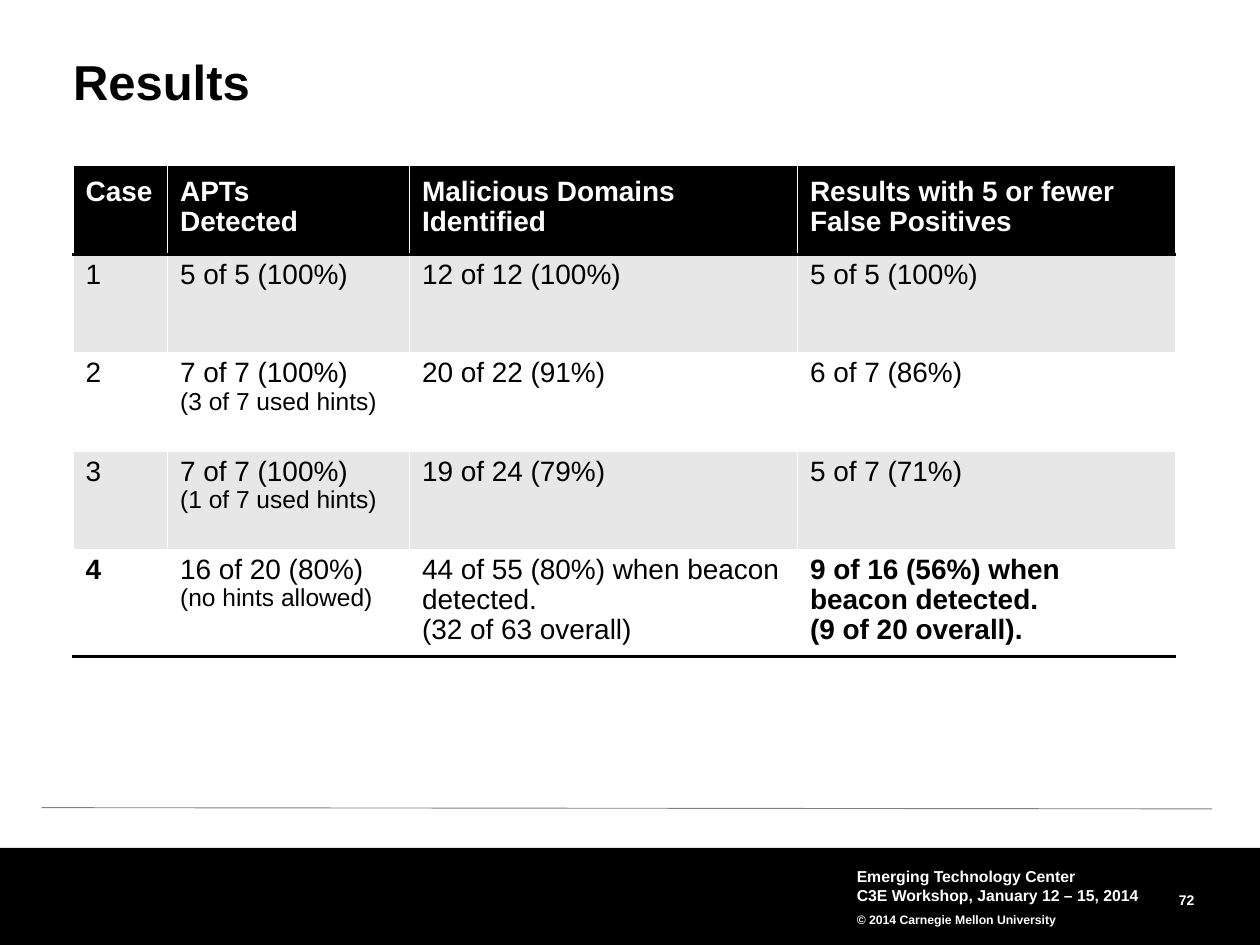
from lxml import etree
from pptx import Presentation
from pptx.dml.color import RGBColor
from pptx.enum import shapes, text
from pptx.oxml.ns import qn
from pptx.util import Inches, Pt

# Content: a cell is a list of lines
TITLE = "Results"
HEADER = [["Case"], ["APTs", "Detected"], ["Malicious Domains Identified"],
          ["Results with 5 or fewer False Positives"]]
CASES = [
    [["1"], ["5 of 5 (100%)"], ["12 of 12 (100%)"], ["5 of 5 (100%)"]],
    [["2"], ["7 of 7 (100%)", "(3 of 7 used hints)"], ["20 of 22 (91%)"], ["6 of 7 (86%)"]],
    [["3"], ["7 of 7 (100%)", "(1 of 7 used hints)"], ["19 of 24 (79%)"], ["5 of 7 (71%)"]],
    [["4"], ["16 of 20 (80%)", "(no hints allowed)"],
     ["44 of 55 (80%) when beacon detected.", "(32 of 63 overall)"],
     ["9 of 16 (56%) when beacon detected.", "(9 of 20 overall)."]],
]
FOOTER = ["Emerging Technology Center", "C3E Workshop, January 12 – 15, 2014"]
COPYRIGHT = "© 2014 Carnegie Mellon University"
PAGE = "72"

COLORS = {"black": "000000", "white": "FFFFFF", "band": "E7E7E7", "rule": "808080"}
COLUMN_WIDTHS = [0.75, 1.92, 3.08, 3]
ROW_HEIGHTS = [0.69, 0.78, 0.78, 0.78, 0.85]
BOLD_CELLS = {(4, 0), (4, 3)}
HINT_COLUMN = 1


def rgb(name):
    return RGBColor.from_string(COLORS[name])


def add_line(frame, words, size=16, color="black", bold=False, spacing=None,
             align=text.PP_ALIGN.LEFT):
    """Write one paragraph, using the empty first one when there is one."""
    paragraph = frame.paragraphs[0]
    if paragraph.runs:
        paragraph = frame.add_paragraph()
    paragraph.alignment = align
    paragraph.line_spacing = spacing
    run = paragraph.add_run()
    run.text = words
    run.font.name = "Arial"
    run.font.size = Pt(size)
    run.font.bold = bold
    run.font.color.rgb = rgb(color)


def add_box(slide, left, top, width, height, margin=0, anchor=text.MSO_ANCHOR.MIDDLE):
    box = slide.shapes.add_textbox(Inches(left), Inches(top), Inches(width), Inches(height))
    frame = box.text_frame
    frame.word_wrap = True
    frame.vertical_anchor = anchor
    frame.margin_left = frame.margin_right = Inches(margin)
    frame.margin_top = frame.margin_bottom = Inches(margin)
    return frame


def add_border(cell, side, color="black", width=2):
    properties = cell._tc.get_or_add_tcPr()
    line = etree.Element(qn(f"a:{side}"), w=str(Pt(width)))
    fill = etree.SubElement(line, qn("a:solidFill"))
    etree.SubElement(fill, qn("a:srgbClr"), val=COLORS[color])
    # Borders come before the fill, in the order they are added
    properties.insert(len(properties.findall(qn("a:lnT"))), line)


def add_results(slide):
    rows = [HEADER] + CASES
    frame = slide.shapes.add_table(len(rows), len(COLUMN_WIDTHS), Inches(0.58), Inches(1.33),
                                   Inches(sum(COLUMN_WIDTHS)), Inches(sum(ROW_HEIGHTS)))
    table = frame.table
    for column, width in zip(table.columns, COLUMN_WIDTHS):
        column.width = Inches(width)
    for row, height in zip(table.rows, ROW_HEIGHTS):
        row.height = Inches(height)

    for r, row in enumerate(rows):
        is_header = r == 0
        fill = "black" if is_header else "band" if r % 2 else "white"
        for c, lines in enumerate(row):
            cell = table.cell(r, c)
            cell.fill.solid()
            cell.fill.fore_color.rgb = rgb(fill)
            cell.margin_top = Inches(0.08 if is_header else 0.05)
            cell.margin_bottom = Inches(0.03)
            for i, words in enumerate(lines):
                is_hint = not is_header and c == HINT_COLUMN and i > 0
                add_line(cell.text_frame, words, size=14 if is_hint else 16,
                         color="white" if is_header else "black",
                         bold=is_header or (r, c) in BOLD_CELLS, spacing=0.96)
            if is_header:
                add_border(cell, "lnT")
            if is_header or r == len(rows) - 1:
                add_border(cell, "lnB")


def add_footer(slide):
    # Thin rule
    rule = slide.shapes.add_connector(shapes.MSO_CONNECTOR.STRAIGHT, Inches(0.33), Inches(6.41),
                                      Inches(9.62), Inches(6.42))
    rule.line.color.rgb = rgb("rule")
    rule.line.width = Pt(0.5)
    etree.SubElement(rule._element.spPr, qn("a:effectLst"))

    # Black band
    band = slide.shapes.add_shape(shapes.MSO_SHAPE.RECTANGLE, 0, Inches(6.73),
                                  Inches(10), Inches(0.77))
    band.shadow.inherit = False
    band.fill.solid()
    band.fill.fore_color.rgb = rgb("black")
    band.line.fill.background()

    # Page number and event
    add_line(add_box(slide, 8.56, 7.03, 0.92, 0.18), PAGE, size=8, color="white", bold=True,
             spacing=Pt(13), align=text.PP_ALIGN.RIGHT)
    event = add_box(slide, 6.75, 6.83, 2.5, 0.58, margin=0.05)
    for words in FOOTER:
        add_line(event, words, size=9, color="white", bold=True)
    add_line(event, COPYRIGHT, size=7, color="white", bold=True, spacing=1.5)


def main():
    presentation = Presentation()
    presentation.slide_width, presentation.slide_height = Inches(10), Inches(7.5)
    slide = presentation.slides.add_slide(presentation.slide_layouts[6])
    add_footer(slide)
    title = add_box(slide, 0.58, 0.46, 8.92, 0.42, anchor=text.MSO_ANCHOR.TOP)
    add_line(title, TITLE, size=28, bold=True, spacing=0.9)
    add_results(slide)
    presentation.save("out.pptx")


if __name__ == "__main__":
    main()
